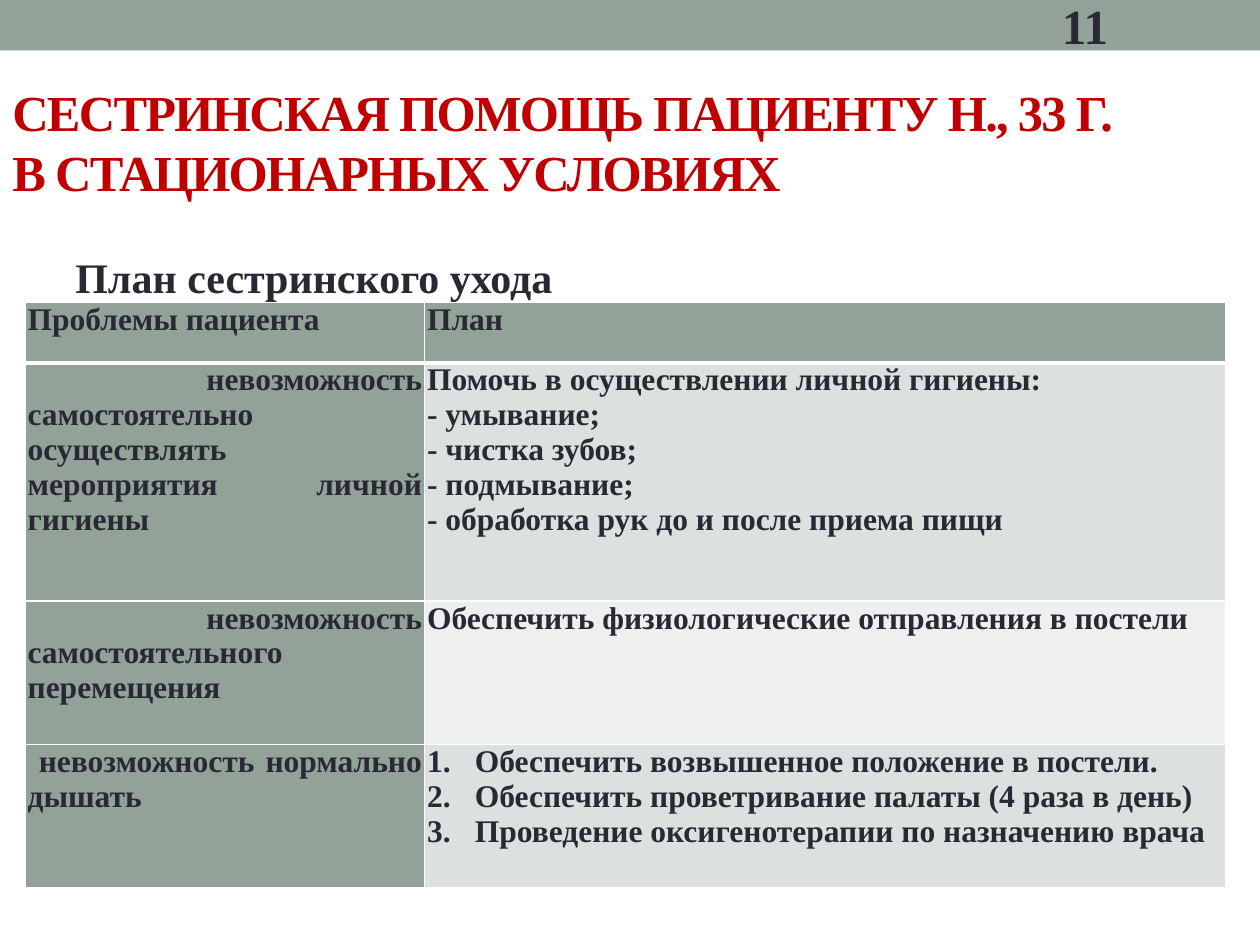
from pptx import Presentation
from pptx.dml.color import RGBColor
from pptx.enum.shapes import MSO_SHAPE as Shape
from pptx.enum.text import MSO_ANCHOR as Anchor, PP_ALIGN as Align
from pptx.oxml.xmlchemy import OxmlElement as Element
from pptx.util import Inches, Pt

INK, SAGE, WHITE, RED = "292934", "93A299", "FFFFFF", "C00000"
LIGHT, PALE = "DCE0DE", "EEF0EF"


def paint(target, color):
    target.solid()
    target.fore_color.rgb = RGBColor.from_string(color)


def write(paragraph, text, size, color=INK, **layout):
    paragraph.text = text
    for run in paragraph.runs:
        for key, value in {"name": "Times New Roman", "size": Pt(size), "bold": True}.items():
            setattr(run.font, key, value)
        paint(run.font.fill, color)
    for key, value in layout.items():
        setattr(paragraph, key, value)


deck = Presentation()
deck.slide_width, deck.slide_height = Inches(10), Inches(7.5)
W, H = deck.slide_width, deck.slide_height
slide = deck.slides.add_slide(deck.slide_layouts[6])

band = slide.shapes.add_shape(Shape.RECTANGLE, 0, 0, W, Inches(0.4))
band.shadow.inherit = False
paint(band.fill, SAGE)
band.line.fill.background()

headings = [
    ("СЕСТРИНСКАЯ ПОМОЩЬ ПАЦИЕНТУ Н., 33 Г. \vВ СТАЦИОНАРНЫХ УСЛОВИЯХ",
     (0, 0.58, 9.5, 1.08), Anchor.MIDDLE, 28.8, RED, {}),
    ("План сестринского ухода",
     (0.5, 1.75, 9, 5.33), Anchor.TOP, 24, INK, {"line_spacing": 1.5, "space_before": Pt(5)}),
    ("11", (8.33, 0.02, 1.17, 0.36), Anchor.MIDDLE, 28, INK, {}),
]
for text, place, anchor, size, color, layout in headings:
    frame = slide.shapes.add_textbox(*map(Inches, place)).text_frame
    frame.word_wrap = True
    frame.vertical_anchor = anchor
    write(frame.paragraphs[0], text, size, color, **layout)
    if color == RED:
        for run in frame.paragraphs[0].runs:
            run.font._element.set("spc", "-100")

care_plan = [
    ("Проблемы пациента", ["План"], SAGE, 0.48),
    (" невозможность самостоятельно осуществлять мероприятия личной гигиены",
     ["Помочь в осуществлении личной гигиены:", "- умывание;", "- чистка зубов;",
      "- подмывание;", "- обработка рук до и после приема пищи"], LIGHT, 1.89),
    (" невозможность самостоятельного перемещения",
     ["Обеспечить физиологические отправления в постели"], PALE, 1.14),
    (" невозможность нормально дышать",
     ["Обеспечить возвышенное положение в постели.",
      "Обеспечить проветривание палаты (4 раза в день)",
      "Проведение оксигенотерапии по назначению врача"], LIGHT, 1.14),
]
margins = {"margin_left": Inches(0.02), "margin_right": Inches(0.02),
           "margin_top": 0, "margin_bottom": 0}
table = slide.shapes.add_table(len(care_plan), 2, *map(Inches, (0.2, 2.4, 9.53, 4.65))).table
for column, width in zip(table.columns, (3.17, 6.36)):
    column.width = Inches(width)

for row, (problem, steps, tint, height) in enumerate(care_plan):
    table.rows[row].height = Inches(height)
    for col, (lines, fill) in enumerate((([problem], SAGE), (steps, tint))):
        cell = table.cell(row, col)
        for key, value in margins.items():
            setattr(cell, key, value)
        for side in "LRTB":
            thick = (row, side) in ((0, "B"), (1, "T"))
            border = Element(f"a:ln{side}")
            border.set("w", str(Pt(3 if thick else 1)))
            border_fill = Element("a:solidFill")
            border_color = Element("a:srgbClr")
            border_color.set("val", WHITE)
            border_fill.append(border_color)
            border.append(border_fill)
            cell._tc.get_or_add_tcPr().append(border)
        paint(cell.fill, fill)
        for index, line in enumerate(lines):
            frame = cell.text_frame
            paragraph = frame.add_paragraph() if index else frame.paragraphs[0]
            write(paragraph, line, 18, alignment=Align.JUSTIFY)
            if row == len(care_plan) - 1 and col == 1:
                props = paragraph._p.get_or_add_pPr()
                props.set("marL", str(Inches(0.38)))
                props.set("indent", str(-Inches(0.38)))
                number = Element("a:buAutoNum")
                number.set("type", "arabicPeriod")
                props.append(number)

deck.save("out.pptx")
